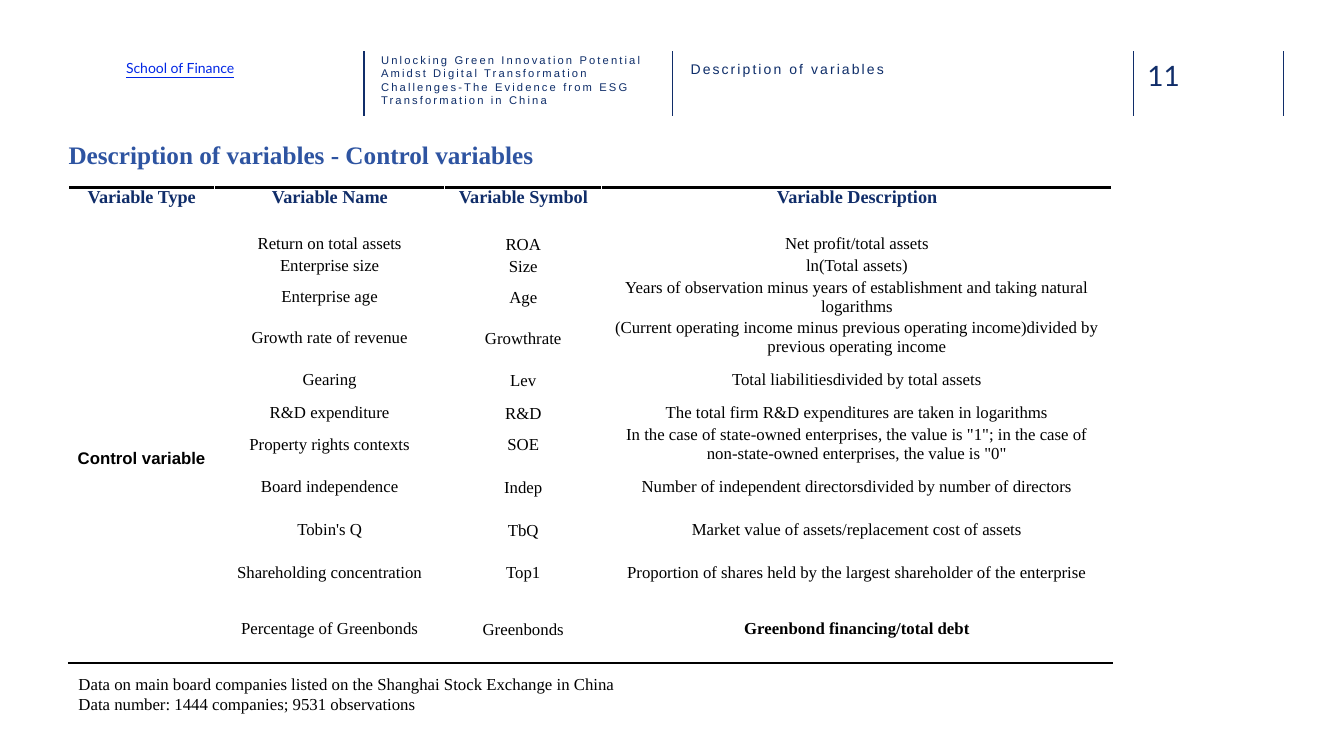
from dataclasses import dataclass

import pptx
import pptx.dml.color
import pptx.enum.shapes
import pptx.enum.text
import pptx.oxml
import pptx.oxml.ns
import pptx.util
from lxml import etree

Inches = pptx.util.Inches
Pt = pptx.util.Pt
RGBColor = pptx.dml.color.RGBColor
Align = pptx.enum.text.PP_ALIGN
Anchor = pptx.enum.text.MSO_ANCHOR

NAVY = RGBColor(0x10, 0x2D, 0x69)
HEADER_NAVY = RGBColor(0x0E, 0x2D, 0x69)
LINK_BLUE = RGBColor(0x00, 0x26, 0xE5)
TITLE_BLUE = RGBColor(0x2E, 0x54, 0xA1)
BLACK = RGBColor(0, 0, 0)
WHITE = RGBColor(255, 255, 255)
SERIF, SANS, LATO = "Times New Roman", "Arial", "Lato"

DIVIDERS = (3.61, 6.67, 11.24, 12.73)
DIVIDER_TOP, DIVIDER_BOTTOM = 0.51, 1.15

COLUMN_WIDTHS = (1.45, 2.28, 1.56, 5.06)
HEADINGS = ("Variable Type", "Variable Name", "Variable Symbol", "Variable Description")
HEADING_HEIGHT = 0.45
SYMBOL_COLUMN = 2


@dataclass
class Variable:
    name: str
    symbol: str
    description: str
    height: float
    bold: bool = False


VARIABLES = (
    Variable("Return on total assets", "ROA", "Net profit/total assets", 0.22),
    Variable("Enterprise size", "Size", "ln(Total assets)", 0.22),
    Variable("Enterprise age", "Age", "Years of observation minus years of "
             "establishment and taking natural logarithms", 0.4),
    Variable("Growth rate of revenue", "Growthrate", "(Current operating income minus previous "
             "operating income)divided by previous operating income", 0.4),
    Variable("Gearing", "Lev", "Total liabilitiesdivided by total assets", 0.44),
    Variable("R&D expenditure", "R&D",
             "The total firm R&D expenditures are taken in logarithms", 0.22),
    Variable("Property rights contexts", "SOE", "In the case of state-owned enterprises, the value "
             'is "1"; in the case of non-state-owned enterprises, the value is "0"', 0.4),
    Variable("Board independence", "Indep",
             "Number of independent directorsdivided by number of directors", 0.44),
    Variable("Tobin's Q", "TbQ", "Market value of assets/replacement cost of assets", 0.41),
    Variable("Shareholding concentration", "Top1",
             "Proportion of shares held by the largest shareholder of the enterprise", 0.44),
    Variable("Percentage of Greenbonds", "Greenbonds", "Greenbond financing/total debt", 0.68, True),
)


@dataclass
class Label:
    text: str
    left: float
    top: float
    width: float
    height: float
    size: float
    font: str
    color: RGBColor
    bold: bool = False
    underline: bool = False
    tracking: float = 0
    inset: tuple[float, float] = (0, 0)


LABELS = (
    Label("11", 11.38, 0.58, 0.73, 0.34, 20, LATO, NAVY),
    Label("School of Finance", 1.25, 0.59, 2.08, 0.45, 10, LATO, LINK_BLUE, underline=True),
    Label("Description of variables", 6.85, 0.6, 2.26, 0.45, 10, SANS, HEADER_NAVY, tracking=1.5),
    Label("Unlocking Green Innovation Potential Amidst Digital Transformation Challenges-"
          "The Evidence from ESG Transformation in China",
          3.78, 0.53, 2.88, 0.67, 8, SANS, HEADER_NAVY, tracking=1.5),
    Label("Description of variables - Control variables",
          0.68, 1.38, 8.95, 0.44, 18, SERIF, TITLE_BLUE, bold=True),
    Label("Data on main board companies listed on the Shanghai Stock Exchange in China\n"
          "Data number: 1444 companies; 9531 observations",
          0.68, 6.63, 5.88, 0.5, 12, SERIF, BLACK, inset=(0.1, 0.05)),
)


def write_text(frame, text: str, *, size: float = 12, font: str = SERIF, color: RGBColor = BLACK,
               bold: bool = False, underline: bool = False, tracking: float = 0,
               align: Align = Align.LEFT, line_spacing: float | None = None) -> None:
    for index, line in enumerate(text.split("\n")):
        paragraph = frame.paragraphs[0] if index == 0 else frame.add_paragraph()
        paragraph.alignment = align
        if line_spacing:
            paragraph.line_spacing = line_spacing
        run = paragraph.add_run()
        run.text = line
        run.font.size = Pt(size)
        run.font.name = font
        run.font.color.rgb = color
        run.font.bold = bold
        if underline:
            run.font.underline = True
        if tracking:
            run.font._element.set("spc", str(int(tracking * 100)))


def add_label(slide, label: Label) -> None:
    box = slide.shapes.add_textbox(Inches(label.left), Inches(label.top),
                                   Inches(label.width), Inches(label.height))
    frame = box.text_frame
    frame.word_wrap = True
    frame.margin_left = frame.margin_right = Inches(label.inset[0])
    frame.margin_top = frame.margin_bottom = Inches(label.inset[1])
    write_text(frame, label.text, size=label.size, font=label.font, color=label.color,
               bold=label.bold, underline=label.underline, tracking=label.tracking)


def add_divider(slide, x: float) -> None:
    line = slide.shapes.add_connector(pptx.enum.shapes.MSO_CONNECTOR.STRAIGHT, Inches(x),
                                      Inches(DIVIDER_TOP), Inches(x), Inches(DIVIDER_BOTTOM))
    line.line.color.rgb = NAVY
    line.line.width = Pt(1)
    etree.SubElement(line._element.spPr, pptx.oxml.ns.qn("a:effectLst"))


def add_border(cell, side: str) -> None:
    """Draw a 2 pt black rule on side "T" or "B" of the cell."""
    border = pptx.oxml.parse_xml(
        f'<a:ln{side} {pptx.oxml.ns.nsdecls("a")} w="{Pt(2)}"><a:solidFill>'
        f'<a:srgbClr val="{BLACK}"/></a:solidFill></a:ln{side}>')
    cell._tc.get_or_add_tcPr().insert(0, border)


def add_variable_table(slide) -> None:
    heights = [HEADING_HEIGHT] + [variable.height for variable in VARIABLES]
    table = slide.shapes.add_table(len(heights), len(COLUMN_WIDTHS), Inches(0.68), Inches(1.86),
                                   Inches(sum(COLUMN_WIDTHS)), Inches(sum(heights))).table
    table.first_row = table.horz_banding = False
    for column, width in zip(table.columns, COLUMN_WIDTHS):
        column.width = Inches(width)
    for row, height in zip(table.rows, heights):
        row.height = Inches(height)

    for cell in table.iter_cells():
        cell.fill.solid()
        cell.fill.fore_color.rgb = WHITE
        cell.margin_left = cell.margin_right = Inches(0.07)
        cell.margin_top = cell.margin_bottom = 0
        cell.vertical_anchor = Anchor.MIDDLE

    for index, heading in enumerate(HEADINGS):
        cell = table.cell(0, index)
        cell.vertical_anchor = Anchor.TOP
        write_text(cell.text_frame, heading, size=13, color=NAVY, bold=True, align=Align.CENTER)
        add_border(cell, "T")
        add_border(table.cell(len(VARIABLES), index), "B")

    for row, variable in enumerate(VARIABLES, start=1):
        # Empty cells need a small font so that they do not stretch their row.
        empty = table.cell(row, 0).text_frame.paragraphs[0]
        empty._p.get_or_add_endParaRPr().set("sz", "1200")
        texts = (variable.name, variable.symbol, variable.description)
        for column, text in enumerate(texts, start=1):
            write_text(table.cell(row, column).text_frame, text, align=Align.CENTER,
                       bold=variable.bold and text == variable.description,
                       line_spacing=1.1 if column == SYMBOL_COLUMN else None)

    group = table.cell(2, 0)
    group.merge(table.cell(len(VARIABLES), 0))
    write_text(group.text_frame, "Control variable", font=SANS, bold=True, align=Align.CENTER)
    add_border(group, "B")


def main() -> None:
    presentation = pptx.Presentation()
    presentation.slide_width = Inches(13.33)
    presentation.slide_height = Inches(7.5)
    slide = presentation.slides.add_slide(presentation.slide_layouts[6])
    for x in DIVIDERS:
        add_divider(slide, x)
    add_variable_table(slide)
    for label in LABELS:
        add_label(slide, label)
    presentation.save("out.pptx")


if __name__ == "__main__":
    main()
